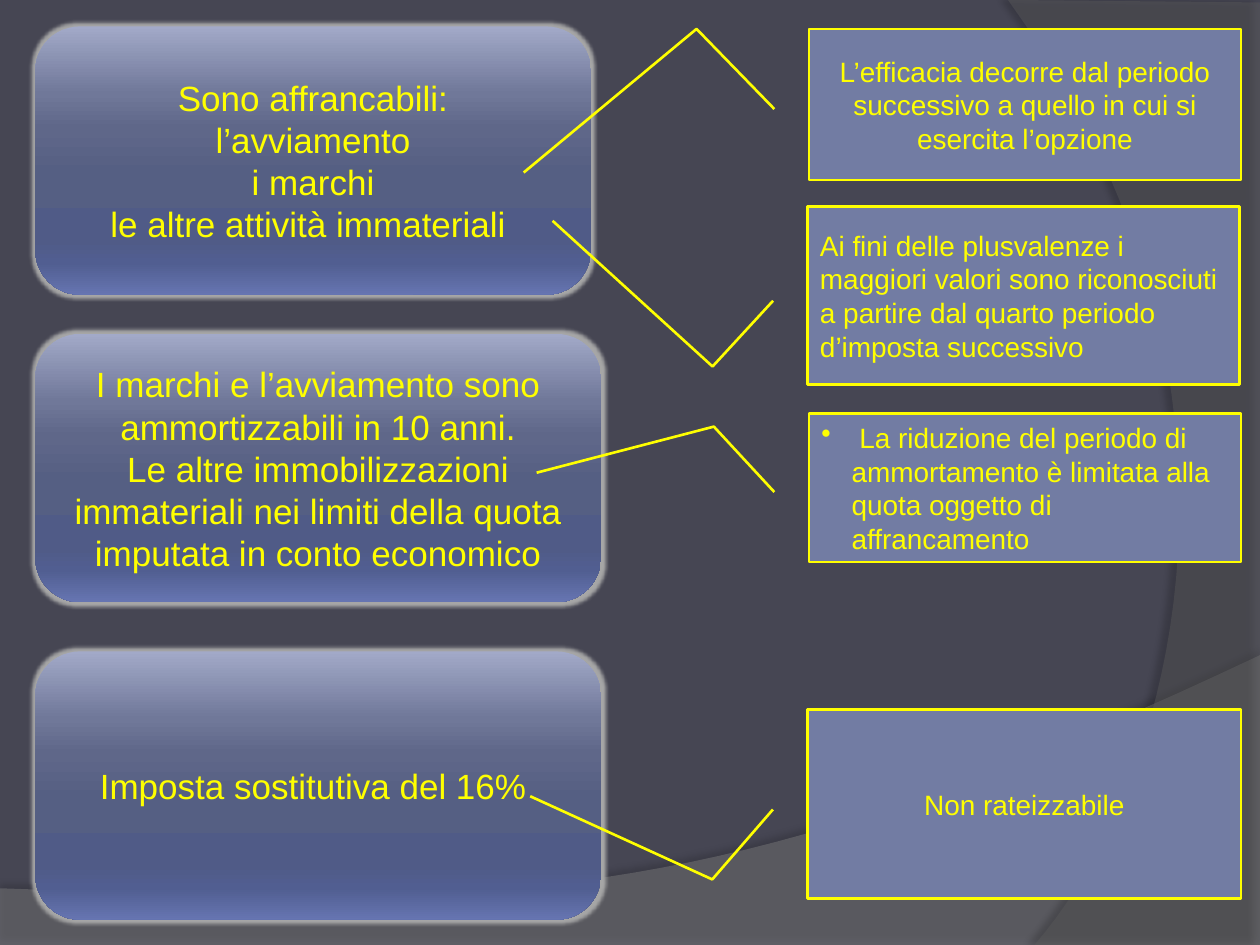
"""Build a slide on the tax relief of intangible assets, with callouts."""
from lxml import etree
from pptx import Presentation
from pptx.dml.color import RGBColor
from pptx.enum import shapes, text
from pptx.oxml import ns, parse_xml
from pptx.util import Pt

THEME = {
    "font": "Arial", "box_size": 20, "note_size": 16, "line": 1.5,
    "back": "464653", "ink": "FFFF00", "note": "727CA3", "glow": "A6A6A6",
    "wave": "7F7F7F", "arc": "5E5E5E",
    "gradient": [(0, "A2A9C8"), (25, "707899"), (38, "5F6789"), (55, "555F83"),
                 (80, "505B87"), (88, "515E91"), (100, "6675B1")],
}
INK = RGBColor.from_string(THEME["ink"])
CENTER, LEFT = text.PP_ALIGN.CENTER, text.PP_ALIGN.LEFT

deck = Presentation()
deck.slide_width, deck.slide_height = Pt(720), Pt(540)
COL, ROW = deck.slide_width / 100, deck.slide_height / 75
slide = deck.slides.add_slide(deck.slide_layouts[6])
slide.background.fill.solid()
slide.background.fill.fore_color.rgb = RGBColor.from_string(THEME["back"])


def write(holder, lines, size, align=CENTER, bullet=None):
    frame = holder.text_frame
    frame.word_wrap = True
    frame.vertical_anchor = text.MSO_ANCHOR.MIDDLE
    frame.text = "\n".join(lines)
    for line in frame.paragraphs:
        line.alignment = align
        line.font.name, line.font.size = THEME["font"], Pt(size)
        line.font.color.rgb = INK
        for run in line.runs:
            run.font.name, run.font.size = THEME["font"], Pt(size)
            run.font.color.rgb = INK
        if bullet:
            layout = line._p.get_or_add_pPr()
            hang = round(2.4 * COL)
            layout.set("marL", str(hang))
            layout.set("indent", str(-hang))
            mark = etree.Element(ns.qn("a:buChar"), char=bullet)
            layout.insert_element_before(mark, "a:tabLst", "a:defRPr", "a:extLst")


def add_effect(holder, tag, color, alpha, **sizes):
    holder.shadow.inherit = False
    effects = holder._element.spPr.find(ns.qn("a:effectLst"))
    effect = etree.SubElement(effects, ns.qn(tag), {k: str(v) for k, v in sizes.items()})
    tint = etree.SubElement(effect, ns.qn("a:srgbClr"), val=color)
    etree.SubElement(tint, ns.qn("a:alpha"), val=str(alpha * 1000))


# start, straight corners, Bezier curve (last corner, two handles, end)
backdrops = [
    ("wave", 45, [(0, 70.5), (0, 75), (100, 75), (100, 52)],
     [(100, 52), (55.9, 72.9), (39.1, 71.9), (0, 70.5)], (35, 3.5, 270)),
    ("arc", 40, [(100, 0.2), (100, 75), (82.1, 75)],
     [(82.1, 75), (93.5, 61.9), (101.8, 30), (80, 0)], (45, 4, 180)),
]
STEPS = 40
for color, alpha, corners, curve, (dark, distance, angle) in backdrops:
    bend = []
    for step in range(1, STEPS + 1):
        t = step / STEPS
        weights = ((1 - t) ** 3, 3 * t * (1 - t) ** 2, 3 * t * t * (1 - t), t ** 3)
        bend.append([sum(w * point[axis] for w, point in zip(weights, curve))
                     for axis in (0, 1)])
    points = [(round(x * COL), round(y * ROW)) for x, y in corners + bend]
    outline = slide.shapes.build_freeform(*points[0])
    outline.add_line_segments(points[1:], close=True)
    backdrop = outline.convert_to_shape()
    backdrop.fill.solid()
    backdrop.fill.fore_color.rgb = RGBColor.from_string(THEME[color])
    tint = backdrop._element.spPr.find(".//" + ns.qn("a:srgbClr"))
    etree.SubElement(tint, ns.qn("a:alpha"), val=str(alpha * 1000))
    backdrop.line.fill.background()
    add_effect(backdrop, "a:outerShdw", "000000", dark, blurRad=Pt(4),
               dist=Pt(distance), dir=angle * 60000)

stops = "".join(f'<a:gs pos="{at * 1000}"><a:srgbClr val="{color}"/></a:gs>'
                for at, color in THEME["gradient"])
gradient = (f'<a:gradFill {ns.nsdecls("a")}><a:gsLst>{stops}</a:gsLst>'
            '<a:lin ang="5400000" scaled="0"/></a:gradFill>')
topics = [
    (2.1, 44.1, ["Sono affrancabili:", "l’avviamento", "i marchi",
                 "le altre attività immateriali "]),
    (26.5, 44.9, ["I marchi e l’avviamento sono ammortizzabili in 10 anni.",
                  "Le altre immobilizzazioni immateriali nei limiti della quota "
                  "imputata in conto economico"]),
    (51.7, 44.9, ["Imposta sostitutiva del 16% "]),
]
for top, width, lines in topics:
    topic = slide.shapes.add_shape(
        shapes.MSO_SHAPE.ROUNDED_RECTANGLE, round(2.8 * COL), round(top * ROW),
        round(width * COL), round(21.3 * ROW))
    topic._element.spPr.append(parse_xml(gradient))
    topic.line.fill.background()
    add_effect(topic, "a:glow", THEME["glow"], 100, rad=Pt(4))
    write(topic, lines, THEME["box_size"])

# left, top, width, height, pointer bend and end (y, x), text, format
notes = [
    (64.2, 2.3, 34.3, 12, (0, -0.26, 0.95, -0.66),
     "L’efficacia decorre dal periodo successivo a quello in cui si esercita l’opzione", {}),
    (64.2, 32.8, 34.3, 11.8, (0.09, -0.22, 0.4, -0.63),
     " La riduzione del periodo di ammortamento è limitata alla quota oggetto di "
     "affrancamento", {"align": LEFT, "bullet": "•"}),
    (64.1, 56.3, 34.4, 15, (0.9, -0.22, 0.46, -0.64), "Non rateizzabile", {}),
    (64.1, 16.4, 34.3, 14.1, (0.9, -0.22, 0.08, -0.59),
     "Ai fini delle plusvalenze i maggiori valori sono riconosciuti a partire dal "
     "quarto periodo d’imposta successivo", {"align": LEFT}),
]
for left, top, width, height, pointer, words, style in notes:
    note = slide.shapes.add_shape(
        shapes.MSO_SHAPE.LINE_CALLOUT_2, round(left * COL), round(top * ROW),
        round(width * COL), round(height * ROW))
    for index, share in enumerate((0.53, -0.08) + pointer):
        note.adjustments[index] = share
    note.shadow.inherit = False
    note.fill.solid()
    note.fill.fore_color.rgb = RGBColor.from_string(THEME["note"])
    note.line.color.rgb = INK
    note.line.width = Pt(THEME["line"])
    write(note, [words], THEME["note_size"], **style)

deck.save("out.pptx")
